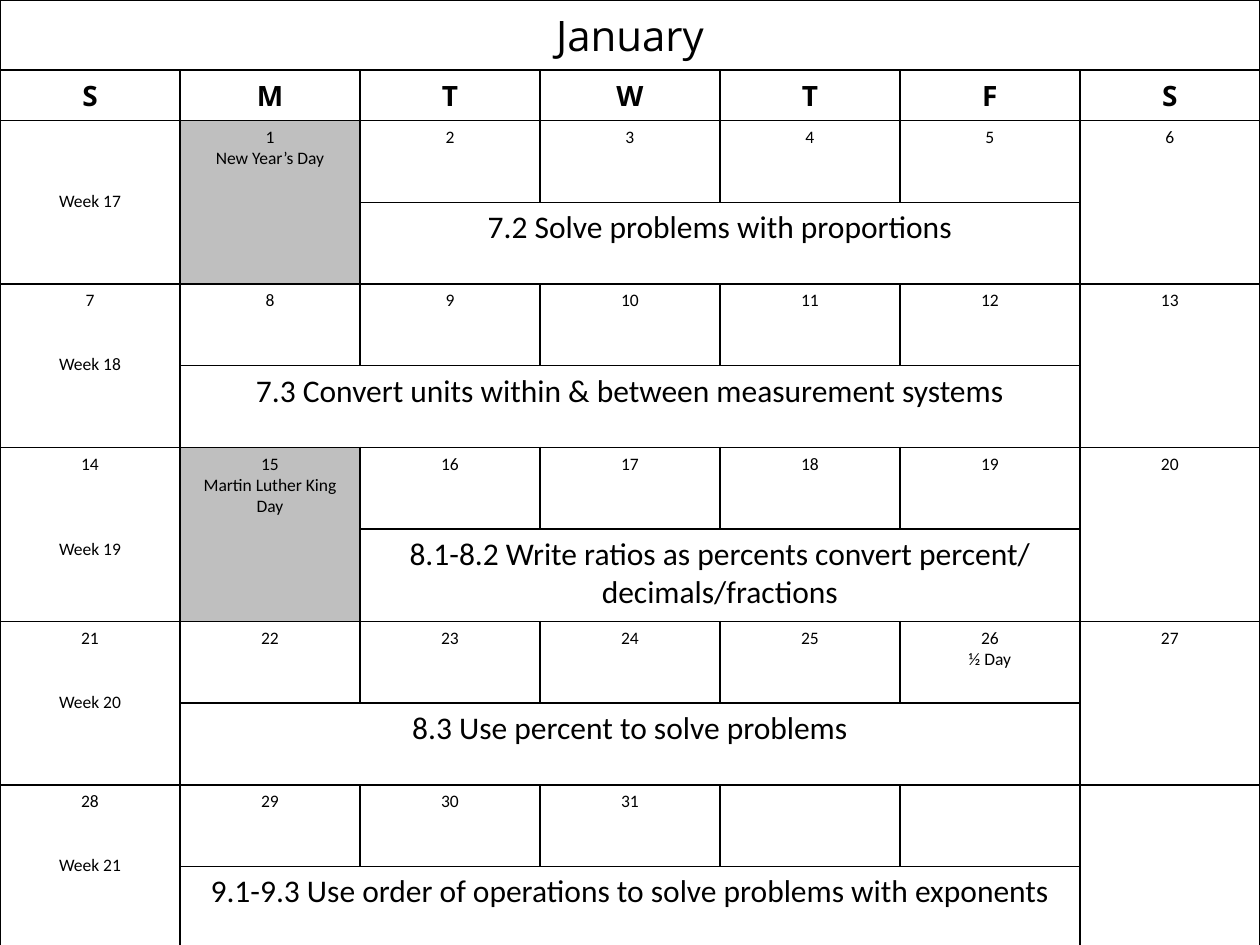
import pptx
import pptx.dml.color
import pptx.enum.text
import pptx.oxml
import pptx.oxml.ns
import pptx.util

Pt = pptx.util.Pt
BLACK = pptx.dml.color.RGBColor(0x00, 0x00, 0x00)
WHITE = pptx.dml.color.RGBColor(0xFF, 0xFF, 0xFF)
HOLIDAY_GRAY = pptx.dml.color.RGBColor(0xBF, 0xBF, 0xBF)
COLUMN_COUNT = 7
LINE_HEIGHT = 12.2
CELL_MARGIN = 3.6


def write(cell, text, size, font="Calibri", bold=False):
    cell.text_frame.text = text
    for para in cell.text_frame.paragraphs:
        para.alignment = pptx.enum.text.PP_ALIGN.CENTER
        for span in para.runs:
            span.font.size = Pt(size)
            span.font.name = font
            span.font.bold = bold
            span.font.color.rgb = BLACK


def add_borders(cell):
    properties = cell._tc.get_or_add_tcPr()
    for side in ("lnL", "lnR", "lnT", "lnB"):
        properties.append(pptx.oxml.parse_xml(
            f'<a:{side} {pptx.oxml.ns.nsdecls("a")} w="12700"><a:solidFill>'
            f'<a:srgbClr val="{BLACK}"/></a:solidFill></a:{side}>'))


deck = pptx.Presentation()
deck.slide_width = Pt(720)
deck.slide_height = Pt(540)
page = deck.slides.add_slide(deck.slide_layouts[6])

row_heights = [38.4, 28.4] + [46.7] * 5 + [52.8] + [46.7] * 4
frame = page.shapes.add_table(
    len(row_heights), COLUMN_COUNT, Pt(0), Pt(0), Pt(720), Pt(540))
calendar = frame.table
calendar.first_row = False
calendar.horz_banding = False
for column in calendar.columns:
    column.width = Pt(720 / COLUMN_COUNT)
for row, height in zip(calendar.rows, row_heights):
    row.height = Pt(height)
for cell in calendar.iter_cells():
    add_borders(cell)
    cell.fill.solid()
    cell.fill.fore_color.rgb = WHITE

calendar.cell(0, 0).merge(calendar.cell(0, COLUMN_COUNT - 1))
write(calendar.cell(0, 0), "January", 24, "Open Sans")
for column, day_letter in enumerate("SMTWTFS"):
    write(calendar.cell(1, column), day_letter, 16, "Open Sans", True)

notes = {1: "New Year’s Day", 15: "Martin Luther King Day", 26: "½ Day"}
holidays = (1, 15)
weeks = [
    ("Week 17", 3, "7.2 Solve problems with proportions"),
    ("Week 18", 2, "7.3 Convert units within & between measurement systems"),
    ("Week 19", 3, "8.1-8.2 Write ratios as percents convert percent/ decimals/fractions"),
    ("Week 20", 2, "8.3 Use percent to solve problems"),
    ("Week 21", 2, "9.1-9.3 Use order of operations to solve problems with exponents"),
]
for week, (label, gap_lines, lesson) in enumerate(weeks):
    top = 2 + 2 * week
    lesson_start = 1
    for column in range(COLUMN_COUNT):
        day = 7 * week + column
        cell = calendar.cell(top, column)
        if column in (0, COLUMN_COUNT - 1) or day in holidays:
            cell.merge(calendar.cell(top + 1, column))
        if day in holidays:
            cell.fill.fore_color.rgb = HOLIDAY_GRAY
            lesson_start = 2
        lines = [str(day)] if 1 <= day <= 31 else []
        if day in notes:
            lines.append(notes[day])
        if column == 0:
            lines.append(label)
        if lines:
            write(cell, "\n".join(lines), 10)

    week_cell = calendar.cell(top, 0)
    gap = gap_lines * LINE_HEIGHT
    if week == 0:
        week_cell.margin_top = Pt(CELL_MARGIN + gap)
    else:
        week_cell.text_frame.paragraphs[-1].space_before = Pt(gap)

    lesson_cell = calendar.cell(top + 1, lesson_start)
    lesson_cell.merge(calendar.cell(top + 1, COLUMN_COUNT - 2))
    write(lesson_cell, lesson, 18)

deck.save("out.pptx")
